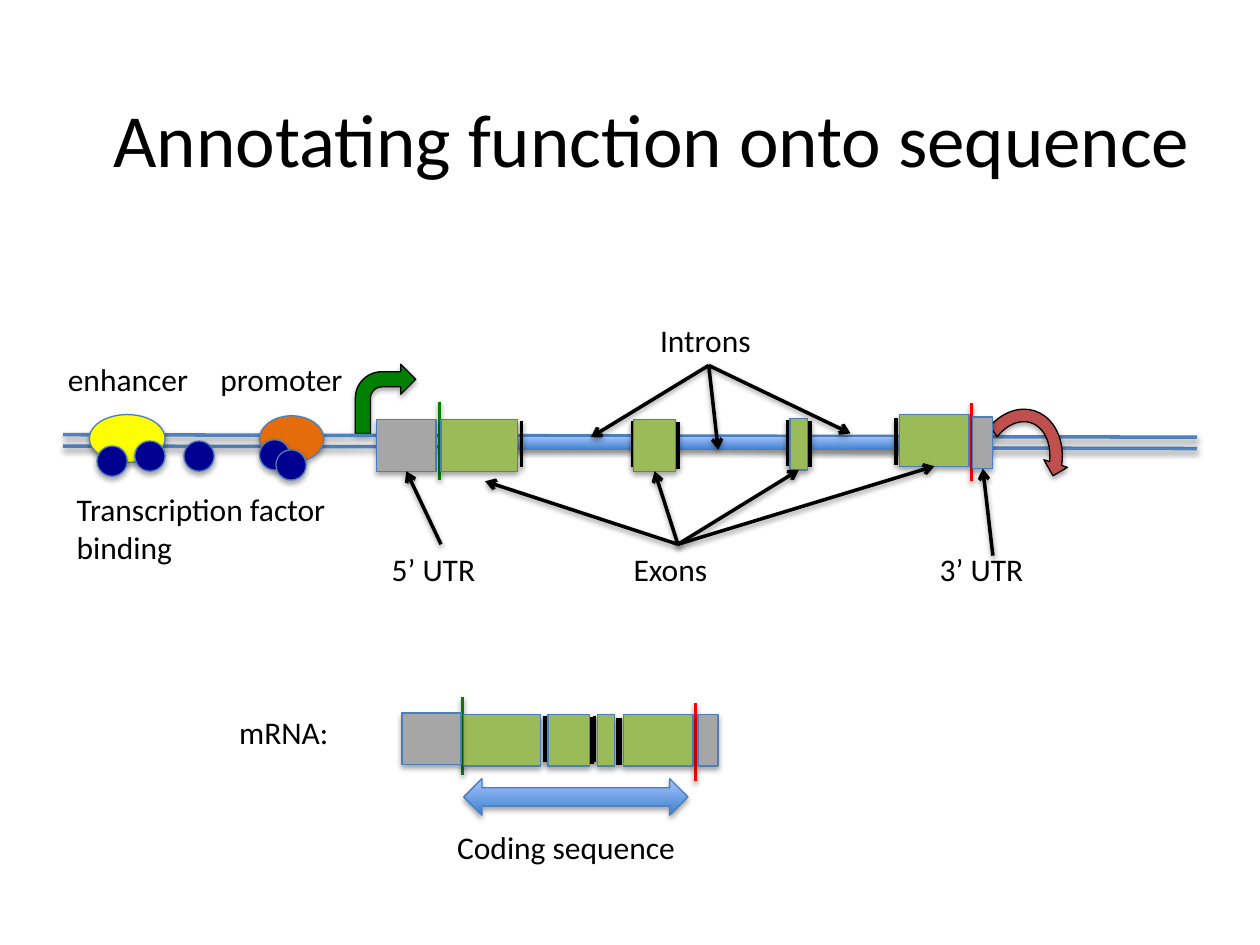
"""Build a slide that annotates gene features on a DNA sequence and its mRNA."""
from lxml import etree
from pptx import Presentation
from pptx.dml.color import RGBColor
from pptx.enum.shapes import MSO_CONNECTOR, MSO_SHAPE
from pptx.enum.text import MSO_ANCHOR, MSO_AUTO_SIZE, PP_ALIGN
from pptx.oxml.ns import qn
from pptx.util import Inches, Pt

STRAIGHT = MSO_CONNECTOR.STRAIGHT
RECT, OVAL = MSO_SHAPE.RECTANGLE, MSO_SHAPE.OVAL
BENT, CIRCULAR = MSO_SHAPE.BENT_ARROW, MSO_SHAPE.CIRCULAR_ARROW
DOUBLE_ARROW = MSO_SHAPE.LEFT_RIGHT_ARROW
MIDDLE, CENTER, LEFT = MSO_ANCHOR.MIDDLE, PP_ALIGN.CENTER, PP_ALIGN.LEFT
GROW, NO_GROW = MSO_AUTO_SIZE.SHAPE_TO_FIT_TEXT, MSO_AUTO_SIZE.NONE
TOP, BOTTOM = 0, 2

BLACK = RGBColor(0x00, 0x00, 0x00)
GREEN = RGBColor(0x00, 0x80, 0x00)
RED = RGBColor(0xFF, 0x00, 0x00)
BRICK = RGBColor(0xC0, 0x50, 0x4D)
OLIVE = RGBColor(0x9B, 0xBB, 0x59)
GREY = RGBColor(0xA6, 0xA6, 0xA6)
ORANGE = RGBColor(0xE4, 0x6C, 0x0A)
YELLOW = RGBColor(0xFF, 0xFF, 0x00)
NAVY = RGBColor(0x00, 0x00, 0x90)
BLUE = RGBColor(0x4F, 0x81, 0xBD)
OUTLINE = RGBColor(0x4B, 0x7E, 0xBC)
BLUE_GRADIENT = (RGBColor(0x3F, 0x80, 0xCE), RGBColor(0xA4, 0xC4, 0xFF))

TITLE = "Annotating function onto sequence"
BOX_HEIGHT = 0.41
WIDTHS = {"utr5": 0.47, "exon1": 0.61, "exon2": 0.33, "exon3": 0.14,
          "exon4": 0.55, "utr3": 0.16}
GENE = {"utr5": (2.99, 3.33), "utr3": (7.72, 3.31), "exon1": (3.5, 3.33),
        "exon2": (5.03, 3.33), "exon4": (7.14, 3.29), "exon3": (6.27, 3.32)}
MRNA = {"exon1": (3.68, 5.67), "exon2": (4.35, 5.67), "exon4": (4.95, 5.67),
        "exon3": (4.74, 5.67), "utr3": (5.54, 5.67), "utr5": (3.19, 5.66)}

CODON_LENGTH, SPLICE_LENGTH = 0.62, 0.37
GENE_CODONS = [(3.49, 3.19, GREEN), (7.71, 3.2, RED)]
MRNA_CODONS = [(3.67, 5.53, GREEN), (5.52, 5.58, RED)]
GENE_SPLICES = [(4.14, 3.34), (5.02, 3.34), (5.38, 3.35),
                (6.25, 3.33), (6.43, 3.34), (7.11, 3.32)]
MRNA_SPLICES = [(4.32, 5.68), (4.34, 5.68), (4.7, 5.69),
                (4.72, 5.68), (4.9, 5.7), (4.92, 5.7)]

LABELS = [
    (["mRNA:"], 1.8, 5.61, 1.02, 0.4),
    (["5’ UTR"], 3.01, 4.32, 0.98, 0.4),
    (["Exons"], 4.93, 4.32, 0.9, 0.4),
    (["3’ UTR"], 7.36, 4.32, 0.98, 0.4),
    (["Introns"], 5.14, 2.5, 0.97, 0.4),
    (["Coding sequence"], 3.53, 6.52, 2.24, 0.4),
    (["promoter"], 1.65, 2.81, 1.21, 0.4),
    (["enhancer"], 0.44, 2.81, 1.25, 0.4),
    (["Transcription factor", "binding"], 0.51, 3.84, 2.35, 0.71),
]
POINTERS = [
    ("Introns", BOTTOM, (5.62, 2.9), (4.69, 3.47), None),
    ("Introns", BOTTOM, (5.62, 2.9), (5.7, 3.57), None),
    ("Introns", BOTTOM, (5.62, 2.9), (6.75, 3.44), None),
    ("Exons", TOP, (5.38, 4.32), (3.85, 3.82), None),
    ("Exons", TOP, (5.38, 4.32), (5.2, 3.74), "exon2"),
    ("Exons", TOP, (5.38, 4.32), (6.34, 3.73), "exon3"),
    ("Exons", TOP, (5.38, 4.32), (7.41, 3.7), "exon4"),
    ("5’ UTR", TOP, (3.5, 4.32), (3.23, 3.74), "utr5"),
    (None, TOP, (7.88, 4.41), (7.8, 3.72), "utr3"),
]
SITES = [(2.06, 3.3, 0.51, 0.37, ORANGE), (0.71, 3.29, 0.6, 0.38, YELLOW)]
FACTOR_SIZE = 0.24
FACTORS = [(0.77, 3.54), (1.07, 3.5), (2.06, 3.49), (1.46, 3.5), (2.19, 3.57)]


def add_shadow(effects, distance, opacity):
    shadow = etree.SubElement(effects, qn("a:outerShdw"), blurRad=str(Pt(3.1)),
                              dist=str(Pt(distance)), dir="5400000", rotWithShape="0")
    color = etree.SubElement(shadow, qn("a:srgbClr"), val=str(BLACK))
    etree.SubElement(color, qn("a:alpha"), val=str(opacity * 1000))


def add_shape(s, kind, x, y, w, h, fill, line=OUTLINE):
    sp = s.shapes.add_shape(kind, Inches(x), Inches(y), Inches(w), Inches(h))
    if isinstance(fill, tuple) and not isinstance(fill, RGBColor):
        sp.fill.gradient()
        sp.fill.gradient_angle = 90
        for stop, color in zip(sp.fill.gradient_stops, fill):
            stop.color.rgb = color
    else:
        sp.fill.solid()
        sp.fill.fore_color.rgb = fill
    sp.line.color.rgb = line
    sp.line.width = Pt(0.75)
    sp.shadow.inherit = False
    add_shadow(sp._element.spPr.find(qn("a:effectLst")), 1.8, 35)
    return sp


def add_line(s, start, end, color=BLACK, arrow=False):
    cxn = s.shapes.add_connector(STRAIGHT, *map(Inches, start + end))
    cxn.line.color.rgb = color
    cxn.line.width = Pt(2)
    spPr = cxn._element.spPr
    if arrow:
        etree.SubElement(spPr.find(qn("a:ln")), qn("a:tailEnd"), type="arrow")
    add_shadow(etree.SubElement(spPr, qn("a:effectLst")), 1.6, 38)
    return cxn


def write_text(tf, lines, size=18, align=LEFT, wrap=False, auto_size=GROW):
    tf.word_wrap = wrap
    tf.auto_size = auto_size
    for i, line in enumerate(lines):
        p = tf.add_paragraph() if i else tf.paragraphs[0]
        p.alignment = align
        r = p.add_run()
        r.text = line
        r.font.name = "Calibri"
        r.font.size = Pt(size)
        r.font.color.rgb = BLACK


def add_marks(s, codons, splices):
    for x, y, color in codons:
        add_line(s, (x, y), (x, y + CODON_LENGTH), color)
    for x, y in splices:
        add_line(s, (x, y), (x, y + SPLICE_LENGTH))


def add_boxes(s, places):
    return {name: add_shape(s, RECT, x, y, WIDTHS[name], BOX_HEIGHT,
                            GREY if name.startswith("utr") else OLIVE)
            for name, (x, y) in places.items()}


def main():
    prs = Presentation()
    prs.slide_width, prs.slide_height = Inches(10), Inches(7.5)
    s = prs.slides.add_slide(prs.slide_layouts[5])

    title = s.shapes.title
    title.left, title.top = Inches(0.67), Inches(0.47)
    title.width, title.height = Inches(9), Inches(1.25)
    title.text_frame.vertical_anchor = MIDDLE
    write_text(title.text_frame, [TITLE], size=42.9, align=CENTER,
               wrap=True, auto_size=NO_GROW)

    add_shape(s, BENT, 2.82, 2.89, 0.48, 0.55, GREEN, BLACK)
    for y in (3.54, 3.45):
        add_line(s, (0.5, y), (9.5, y + 0.02), BLUE)
    terminator = add_shape(s, CIRCULAR, 7.68, 3.19, 0.79, 0.99, BRICK, BLACK)
    terminator.rotation = 17.9
    for i, value in enumerate((0.125, 11.423, 204.577, 129.545, 0.125)):
        terminator.adjustments[i] = value

    add_marks(s, MRNA_CODONS, MRNA_SPLICES)
    add_boxes(s, MRNA)
    add_shape(s, RECT, 4.03, 3.46, 3.33, 0.11, BLUE_GRADIENT)
    add_marks(s, GENE_CODONS, GENE_SPLICES)
    boxes = add_boxes(s, GENE)

    labels = {}
    for lines, *place in LABELS:
        label = s.shapes.add_textbox(*map(Inches, place))
        write_text(label.text_frame, lines)
        labels[lines[0]] = label

    for label, side, start, end, box in POINTERS:
        cxn = add_line(s, start, end, arrow=True)
        if label:
            cxn.begin_connect(labels[label], side)
        if box:
            cxn.end_connect(boxes[box], BOTTOM)

    add_shape(s, DOUBLE_ARROW, 3.68, 6.18, 1.78, 0.29, BLUE_GRADIENT)
    for site in SITES:
        add_shape(s, OVAL, *site)
    for x, y in FACTORS:
        add_shape(s, OVAL, x, y, FACTOR_SIZE, FACTOR_SIZE, NAVY)

    prs.save("out.pptx")


if __name__ == "__main__":
    main()
